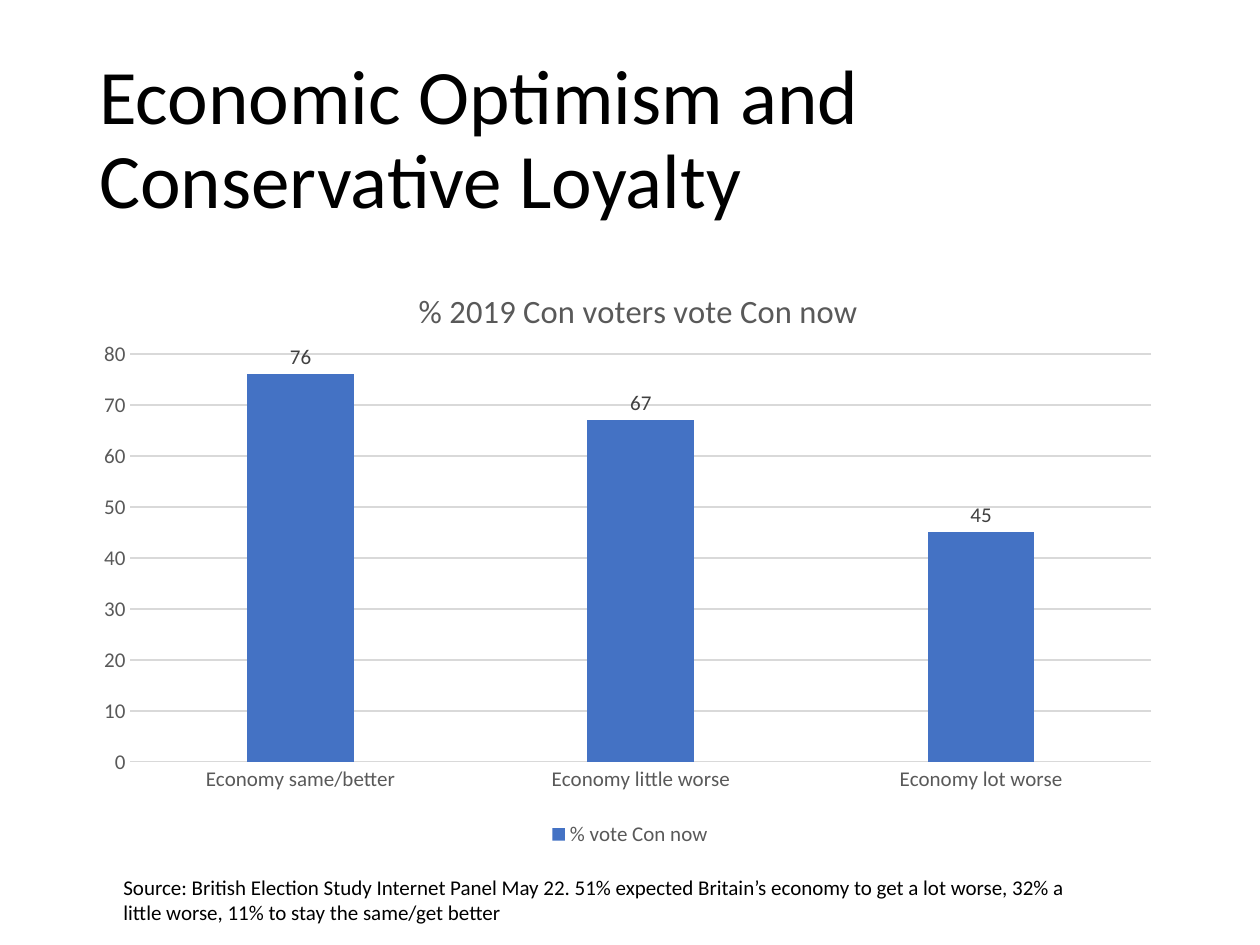
from lxml import etree
from pptx import Presentation
from pptx import util as u
from pptx.chart.data import CategoryChartData
from pptx.dml.color import RGBColor
from pptx.enum import chart as ch, text
from pptx.oxml.ns import qn

PX_PER_INCH = 126
COLORS = {
    "black": "000000",
    "white": "FFFFFF",
    "bar": "4472C4",
    "grid": "D9D9D9",
    "axis": "595959",
    "label": "404040",
}


def px(n):
    return u.Emu(round(n * 914400 / PX_PER_INCH))


class Deck:
    """Holds the style and the current slide."""

    font = "Calibri"

    def __init__(self, width, height):
        self.prs = Presentation()
        self.prs.slide_width, self.prs.slide_height = px(width), px(height)
        self.s = self.prs.slides.add_slide(self.prs.slide_layouts[6])
        fill = self.s.background.fill
        fill.solid()
        fill.fore_color.rgb = self.color("white")

    def color(self, name):
        return RGBColor.from_string(COLORS[name])

    def style(self, font, size, color):
        font.name, font.size, font.bold = self.font, u.Pt(size), False
        font.color.rgb = self.color(color)

    def line(self, fmt, color):
        fmt.line.color.rgb = self.color(color)
        fmt.line.width = u.Pt(0.75)

    def text(self, box, words, size, anchor, spacing=1.0):
        tf = self.s.shapes.add_textbox(*map(px, box)).text_frame
        tf.word_wrap = True
        tf.vertical_anchor = anchor
        tf.text = words
        p = tf.paragraphs[0]
        p.line_spacing = spacing
        self.style(p.runs[0].font, size, "black")

    def place(self, parent, index, **settings):
        """Give a chart part a manual layout, as fractions of the chart."""
        for old in parent.findall(qn("c:layout")):
            parent.remove(old)
        layout = etree.Element(qn("c:layout"))
        manual = etree.SubElement(layout, qn("c:manualLayout"))
        for tag, value in settings.items():
            etree.SubElement(manual, qn("c:" + tag)).set("val", str(value))
        parent.insert(index, layout)

    def column_chart(self, box, title, series_name, values):
        data = CategoryChartData()
        data.categories = list(values)
        data.add_series(series_name, list(values.values()))
        chart = self.s.shapes.add_chart(
            ch.XL_CHART_TYPE.COLUMN_CLUSTERED, *map(px, box), data).chart
        self.style(chart.font, 10, "black")

        # Chart title
        chart.has_title = True
        tf = chart.chart_title.text_frame
        tf.text = title
        self.style(tf.paragraphs[0].runs[0].font, 18.6, "axis")
        self.place(chart.chart_title._element, 1,
                   xMode="edge", yMode="edge", x=0.3, y=0.05)

        # Legend
        chart.has_legend = True
        chart.legend.position = ch.XL_LEGEND_POSITION.BOTTOM
        chart.legend.include_in_layout = False
        self.style(chart.legend.font, 12, "axis")

        # Axes
        for axis in (chart.category_axis, chart.value_axis):
            axis.major_tick_mark = axis.minor_tick_mark = ch.XL_TICK_MARK.NONE
            self.style(axis.tick_labels.font, 12, "axis")
        self.line(chart.category_axis.format, "grid")
        axis = chart.value_axis
        axis.minimum_scale, axis.maximum_scale, axis.major_unit = 0, 80, 10
        axis.format.line.fill.background()
        self.line(axis.major_gridlines.format, "grid")

        # Columns and their labels
        plot = chart.plots[0]
        plot.vary_by_categories = False
        plot.gap_width, plot.overlap = 219, -27
        series = plot.series[0]
        series.format.fill.solid()
        series.format.fill.fore_color.rgb = self.color("bar")
        labels = series.data_labels
        labels.show_value = True
        labels.position = ch.XL_LABEL_POSITION.OUTSIDE_END
        self.style(labels.font, 12, "label")
        plot_area = chart._chartSpace.find(".//" + qn("c:plotArea"))
        self.place(plot_area, 0, layoutTarget="inner", xMode="edge",
                   yMode="edge", x=0.04, y=0.17, w=0.94, h=0.68)


def main():
    deck = Deck(1260, 945)

    # Heading
    deck.text((87, 50, 1086, 183), "Economic Optimism and Conservative Loyalty",
              44, text.MSO_ANCHOR.MIDDLE, 0.9)

    # Loyalty by economic outlook
    deck.column_chart(
        (87, 252, 1086, 600), "% 2019 Con voters vote Con now", "% vote Con now",
        {"Economy same/better": 76, "Economy little worse": 67,
         "Economy lot worse": 45})

    # Source note
    deck.text((111, 868, 970, 63),
              "Source: British Election Study Internet Panel May 22. 51% expected "
              "Britain’s economy to get a lot worse, 32% a little worse, "
              "11% to stay the same/get better", 12, text.MSO_ANCHOR.TOP)

    deck.prs.save("out.pptx")


if __name__ == "__main__":
    main()
